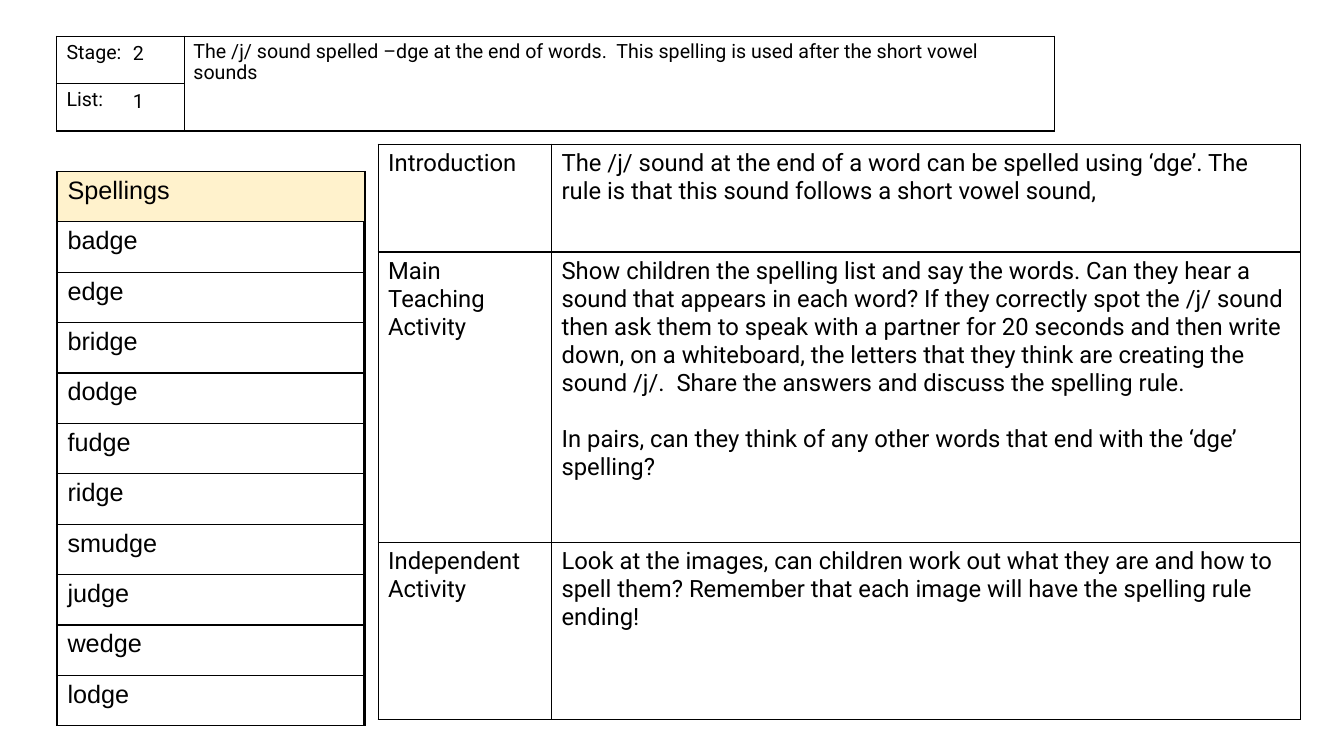
from dataclasses import dataclass

from lxml.etree import SubElement
from pptx import Presentation
from pptx.dml.color import RGBColor
from pptx.enum.shapes import MSO_SHAPE
from pptx.oxml.ns import qn
from pptx.util import Pt

EMU_PER_PX = 9144  # 100 px to the inch


def px(length):
    return length * EMU_PER_PX


@dataclass(frozen=True)
class Theme:
    ink: str = "000000"
    panel: str = "FFFFFF"
    heading_fill: str = "FFF2CC"
    body_font: str = "Roboto"
    list_font: str = "Arial"
    label_size: int = 14
    plan_size: int = 17
    list_size: int = 18
    paragraph_gap: int = 20
    border_width: int = 1


def write_text(text_frame, text, font, size, color, line_spacing=None, gap=0):
    """Write one paragraph per line of text, with a gap between paragraphs."""
    for index, line in enumerate(text.split("\n")):
        paragraph = text_frame.add_paragraph() if index else text_frame.paragraphs[0]
        if index:
            paragraph.space_before = Pt(gap)
        if line_spacing:
            paragraph.line_spacing = line_spacing
        run = paragraph.add_run()
        run.text = line
        run.font.name = font
        run.font.size = Pt(size)
        run.font.color.rgb = RGBColor.from_string(color)


class LessonSlide:
    def __init__(self, slide, theme):
        self.slide = slide
        self.theme = theme

    def add_panel(self, left, top, width, height):
        panel = self.slide.shapes.add_shape(
            MSO_SHAPE.RECTANGLE, px(left), px(top), px(width), px(height))
        panel.shadow.inherit = False
        color = RGBColor.from_string(self.theme.panel)
        panel.fill.solid()
        panel.fill.fore_color.rgb = color
        panel.line.color.rgb = color
        panel.line.width = Pt(self.theme.border_width)

    def add_borders(self, cell):
        properties = cell._tc.get_or_add_tcPr()
        for side in ("a:lnL", "a:lnR", "a:lnT", "a:lnB"):
            line = SubElement(properties, qn(side), w=str(Pt(self.theme.border_width)))
            fill = SubElement(line, qn("a:solidFill"))
            SubElement(fill, qn("a:srgbClr"), val=self.theme.ink)

    def add_table(self, left, top, column_widths, row_heights, rows, font, size,
                  heading_fill=None):
        frame = self.slide.shapes.add_table(
            len(row_heights), len(column_widths), px(left), px(top),
            px(sum(column_widths)), px(sum(row_heights)))
        table = frame.table
        table.first_row = table.horz_banding = False
        for column, width in zip(table.columns, column_widths):
            column.width = px(width)
        for row_index, (height, texts) in enumerate(zip(row_heights, rows)):
            table.rows[row_index].height = px(height)
            for column_index, text in enumerate(texts):
                cell = table.cell(row_index, column_index)
                self.add_borders(cell)
                if heading_fill and row_index == 0:
                    cell.fill.solid()
                    cell.fill.fore_color.rgb = RGBColor.from_string(heading_fill)
                else:
                    cell.fill.background()
                if text:
                    write_text(cell.text_frame, text, font, size, self.theme.ink,
                               gap=self.theme.paragraph_gap)
        return table

    def add_text(self, left, top, width, height, text):
        box = self.slide.shapes.add_textbox(px(left), px(top), px(width), px(height))
        box.text_frame.word_wrap = True
        write_text(box.text_frame, text, self.theme.body_font, self.theme.label_size,
                   self.theme.ink, line_spacing=0.9)


SPELLINGS = ["Spellings", "badge", "edge", "bridge", "dodge", "fudge", "ridge",
             "smudge", "judge", "wedge", "lodge"]

LESSON_PLAN = [
    ("Introduction",
     "The /j/ sound at the end of a word can be spelled using ‘dge’. The rule is that "
     "this sound follows a short vowel sound,"),
    ("Main Teaching Activity",
     "Show children the spelling list and say the words. Can they hear a sound that "
     "appears in each word? If they correctly spot the /j/ sound then ask them to speak "
     "with a partner for 20 seconds and then write down, on a whiteboard, the letters "
     "that they think are creating the sound /j/.  Share the answers and discuss the "
     "spelling rule.\n"
     "In pairs, can they think of any other words that end with the ‘dge’ spelling?"),
    ("Independent Activity",
     "Look at the images, can children work out what they are and how to spell them? "
     "Remember that each image will have the spelling rule ending!"),
]


def main():
    presentation = Presentation()
    presentation.slide_width = px(1333)
    presentation.slide_height = px(750)
    theme = Theme()
    lesson = LessonSlide(
        presentation.slides.add_slide(presentation.slide_layouts[6]), theme)

    lesson.add_panel(17, 15, 1300, 722)
    header = lesson.add_table(56, 36, [127, 863], [47, 47],
                              [("Stage:", ""), ("List:", "")],
                              theme.body_font, theme.label_size)
    header.cell(0, 1).merge(header.cell(1, 1))

    # The empty grid, one px to the left, thickens the rules of the word list.
    empty_rows = [("",) for _ in SPELLINGS]
    word_rows = [(word,) for word in SPELLINGS]
    for left, rows, fill in ((56, empty_rows, None),
                             (57, word_rows, theme.heading_fill)):
        lesson.add_table(left, 170, [305], [50] * len(rows), rows,
                         theme.list_font, theme.list_size, heading_fill=fill)

    for top, number in ((38, "2"), (86, "1")):
        lesson.add_text(122, top, 47, 40, number)
    lesson.add_text(182, 36, 864, 95,
                    "The /j/ sound spelled –dge at the end of words.  This spelling is "
                    "used after the short vowel sounds")

    lesson.add_table(375, 143, [172, 743], [107, 288, 176], LESSON_PLAN,
                     theme.body_font, theme.plan_size)

    presentation.save("out.pptx")


if __name__ == "__main__":
    main()
